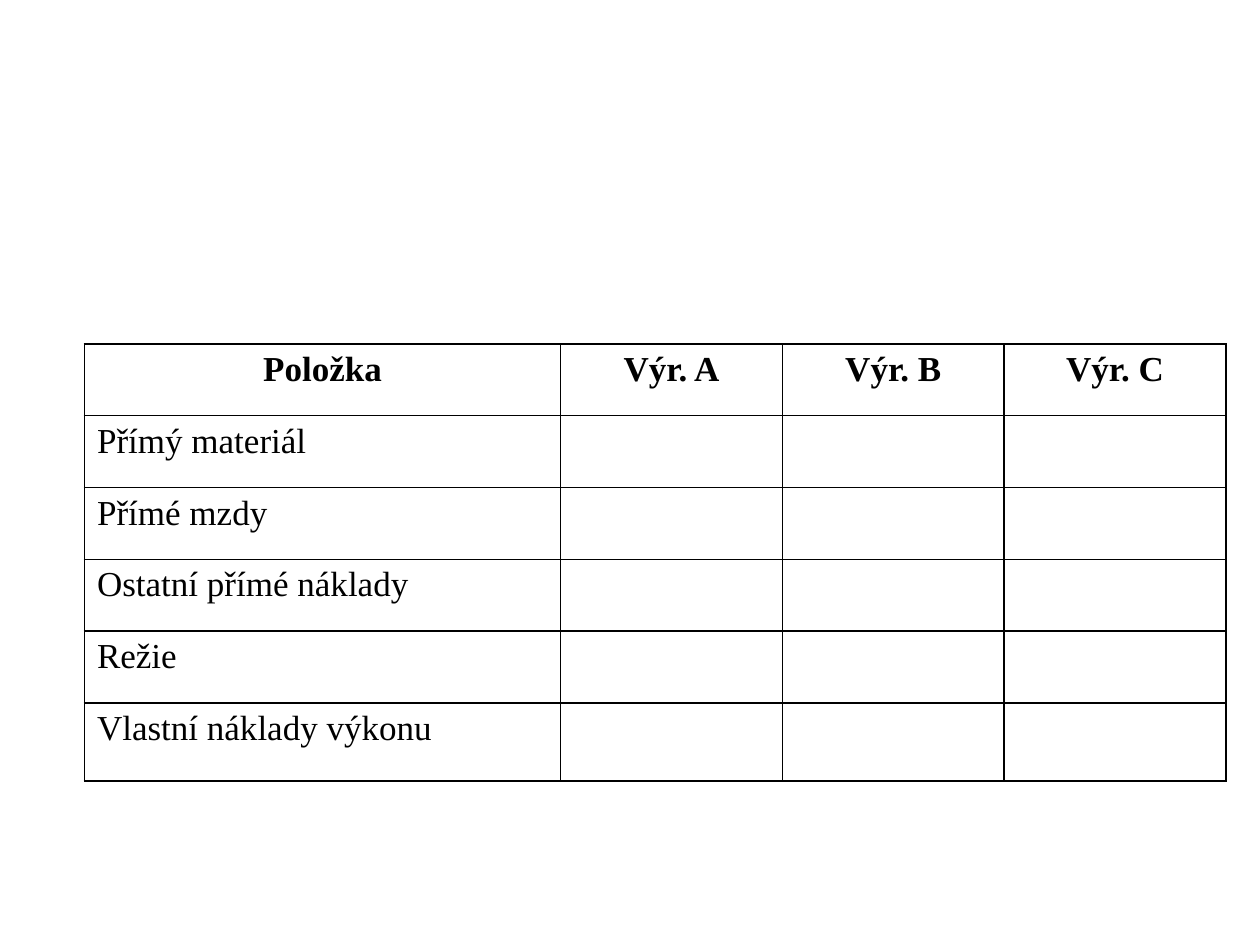
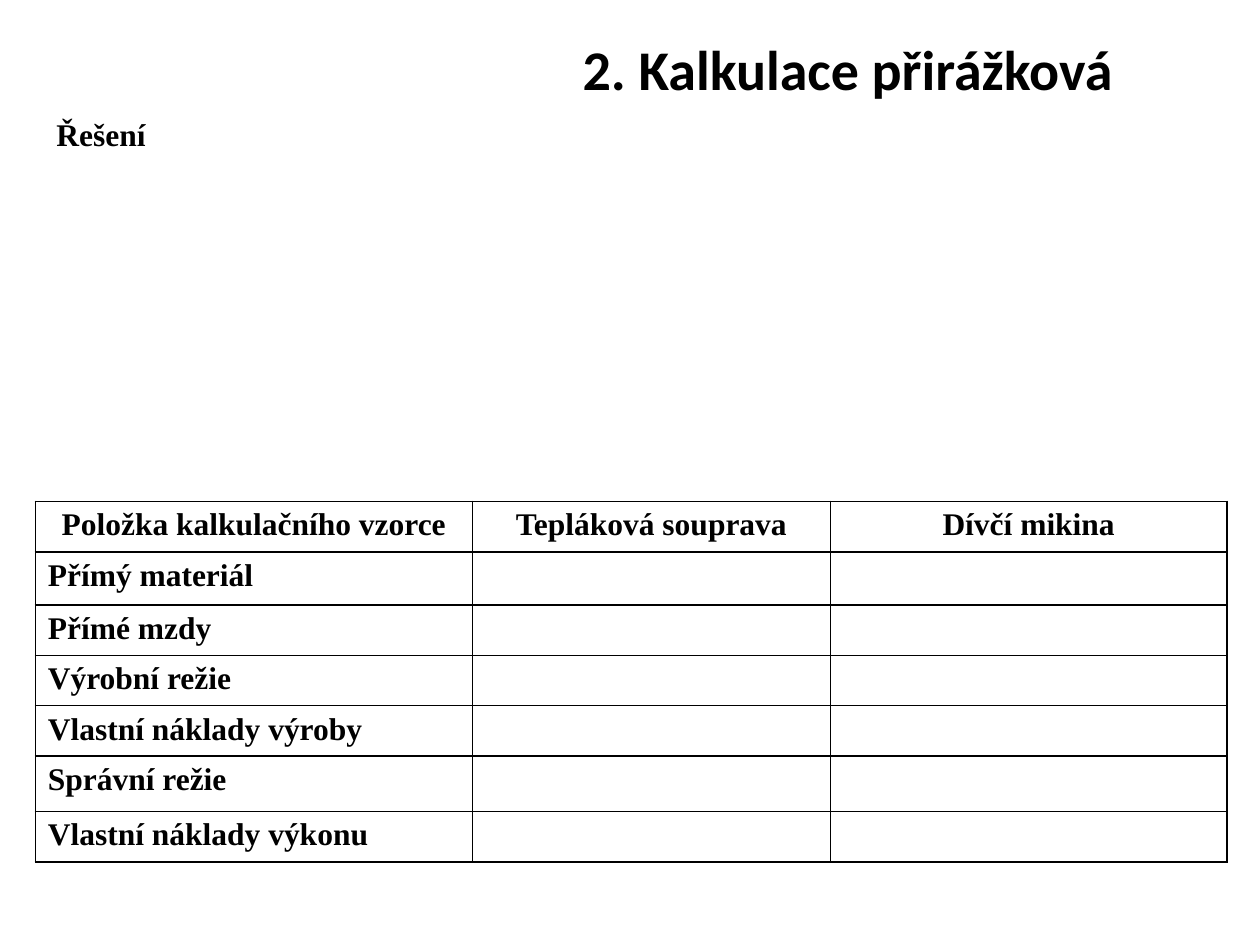
from dataclasses import dataclass
from pptx import Presentation
from pptx.dml.color import RGBColor as Rgb
from pptx.enum.text import MSO_ANCHOR as Anchor, PP_ALIGN as Align
from pptx.oxml.ns import qn
from pptx.util import Inches, Pt
from lxml.etree import SubElement as Sub, Element


@dataclass(frozen=True)
class Theme:
    ink: str = "000000"
    head: str = "Calibri"
    body: str = "Times New Roman"
    title: int = 32
    large: int = 20
    small: int = 18
    rule: int = 1


@dataclass(frozen=True)
class Label:
    text: str
    box: tuple[float, float, float, float]
    face: str
    size: int
    align: Align
    anchor: Anchor = Anchor.TOP
    hang: float = 0
    space: float = 1.0


@dataclass(frozen=True)
class Grid:
    left: float
    top: float
    cols: list[float]
    rows: list[float]
    heads: list[str]
    items: list[str]
    size: int
    bold: bool
    hang: float = 0
    tab: float = 0


THEME = Theme()


def style(font, face: str, size: int, bold: bool) -> None:
    form = {"name": face, "size": Pt(size), "bold": bold}
    for key, value in form.items():
        setattr(font, key, value)
    font.color.rgb = Rgb.from_string(THEME.ink)


def indent(para, hang: float) -> None:
    if hang:
        props = para._p.get_or_add_pPr()
        props.set("marL", str(Inches(hang)))
        props.set("indent", str(-Inches(hang)))


def add_tab(para, place: float) -> None:
    if place:
        tabs = Sub(para._p.get_or_add_pPr(), qn("a:tabLst"))
        Sub(tabs, qn("a:tab"), pos=str(Inches(place)), algn="l")


def add_label(slide, label: Label) -> None:
    box = slide.shapes.add_textbox(*map(Inches, label.box))
    frame = box.text_frame
    frame.word_wrap = True
    frame.vertical_anchor = label.anchor
    para = frame.paragraphs[0]
    para.alignment = label.align
    para.line_spacing = label.space
    indent(para, label.hang)
    run = para.add_run()
    run.text = label.text
    style(run.font, label.face, label.size, True)


def frame_cell(cell) -> None:
    """Clear the fill and rule all four sides."""
    cell.fill.background()
    props = cell._tc.get_or_add_tcPr()
    for spot, side in enumerate("LRTB"):
        line = Element(qn(f"a:ln{side}"), w=str(Pt(THEME.rule)))
        fill = Sub(line, qn("a:solidFill"))
        Sub(fill, qn("a:srgbClr"), val=THEME.ink)
        props.insert(spot, line)


def add_grid(slide, grid: Grid) -> None:
    area = (grid.left, grid.top, sum(grid.cols), sum(grid.rows))
    shape = slide.shapes.add_table(len(grid.rows), len(grid.cols),
                                   *map(Inches, area))
    table = shape.table
    table.first_row = table.horz_banding = False
    for col, width in zip(table.columns, grid.cols):
        col.width = Inches(width)
    for row, height in zip(table.rows, grid.rows):
        row.height = Inches(height)

    blank = [""] * (len(grid.cols) - 1)
    lines = [grid.heads] + [[item, *blank] for item in grid.items]
    for r, line in enumerate(lines):
        for c, text in enumerate(line):
            cell = table.cell(r, c)
            frame_cell(cell)
            para = cell.text_frame.paragraphs[0]
            if text:
                para.alignment = Align.JUSTIFY if r else Align.CENTER
                indent(para, grid.hang)
                add_tab(para, grid.tab)
                run = para.add_run()
                run.text = text
                style(run.font, THEME.body, grid.size, grid.bold or r == 0)
            else:
                # Empty cells keep the type size, so rows stay even
                end = Sub(para._p, qn("a:endParaRPr"), sz=str(grid.size * 100))
                Sub(end, qn("a:latin"), typeface=THEME.body)


# Slide 1: costs by product
COSTS = Grid(
    0.67, 2.73, [3.78] + [1.76] * 3, [0.57] * 5 + [0.62],
    ["Položka", "Výr. A", "Výr. B", "Výr. C"],
    ["Přímý materiál", "Přímé mzdy", "Ostatní přímé náklady", "Režie",
     "Vlastní náklady výkonu"],
    THEME.large, False, hang=0.38)

# Slide 2: overhead costing
TITLE = Label("2. Kalkulace přirážková", (2.28, 0.16, 8.9, 0.76),
              THEME.head, THEME.title, Align.CENTER, Anchor.MIDDLE)
ANSWER = Label("Řešení", (0.35, 0.92, 9.37, 3.62), THEME.body, THEME.small,
               Align.JUSTIFY, hang=0.5, space=0.8)
SCHEME = Grid(
    0.28, 3.98, [3.47, 2.84, 3.15], [0.33, 0.42, 0.33, 0.33, 0.33, 0.44, 0.33],
    ["Položka kalkulačního vzorce", "Tepláková souprava", "Dívčí mikina"],
    ["Přímý materiál", "Přímé mzdy", "Výrobní režie",
     "Vlastní náklady výroby", "Správní režie", "Vlastní náklady výkonu"],
    THEME.small, True, tab=0.98)


def main() -> None:
    deck = Presentation()
    deck.slide_width, deck.slide_height = Inches(10), Inches(7.5)
    blank = deck.slide_layouts[6]
    for labels, grid in (([], COSTS), ([TITLE, ANSWER], SCHEME)):
        slide = deck.slides.add_slide(blank)
        for label in labels:
            add_label(slide, label)
        add_grid(slide, grid)
    deck.save("out.pptx")


if __name__ == "__main__":
    main()
